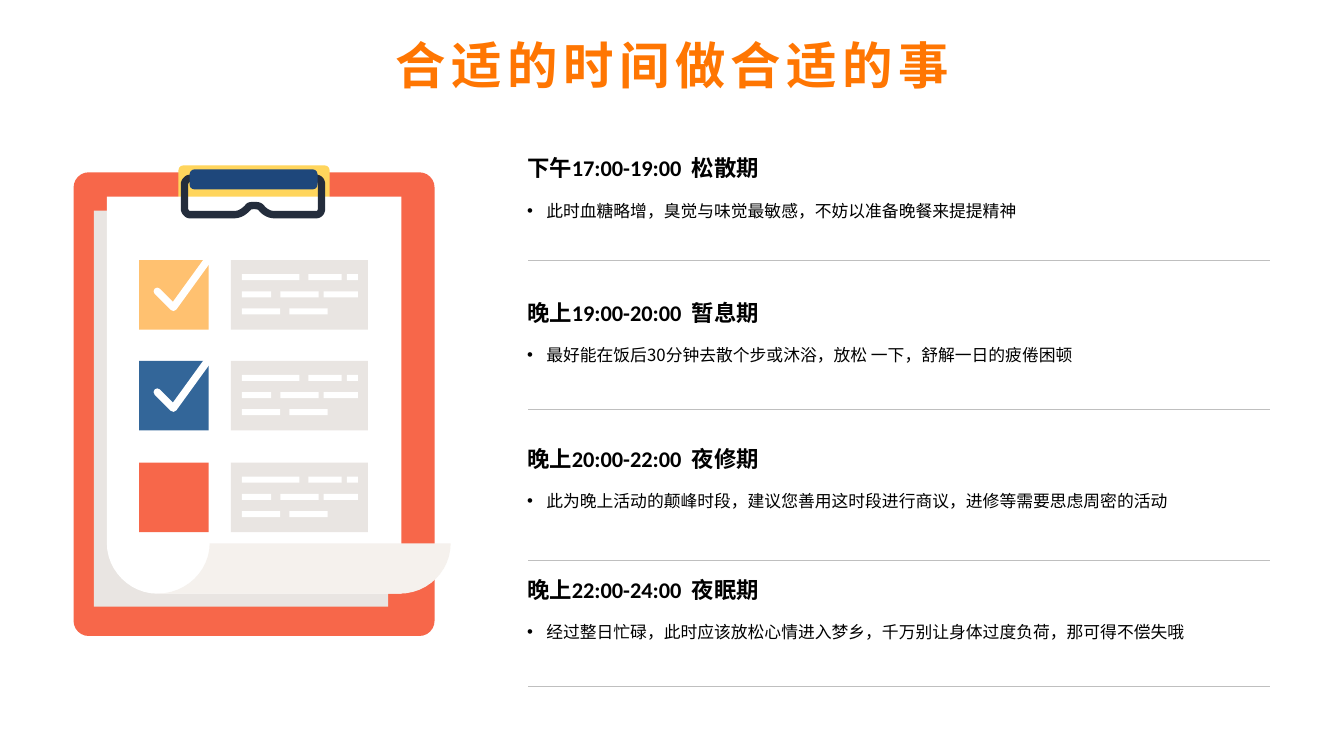
from lxml import etree
from pptx import Presentation
from pptx.dml.color import RGBColor
from pptx.enum.shapes import MSO_CONNECTOR, MSO_SHAPE
from pptx.enum.text import MSO_ANCHOR, MSO_AUTO_SIZE, PP_ALIGN
from pptx.oxml.ns import qn
from pptx.util import Inches, Pt

RECT = MSO_SHAPE.RECTANGLE
ROUNDED = MSO_SHAPE.ROUNDED_RECTANGLE
STRAIGHT = MSO_CONNECTOR.STRAIGHT
TOP, BOTTOM = MSO_ANCHOR.TOP, MSO_ANCHOR.BOTTOM
CENTER = PP_ALIGN.CENTER
GROW = MSO_AUTO_SIZE.SHAPE_TO_FIT_TEXT

COLORS = {
    "title": "FF7602", "text": "000000", "rule": "BFBFBF", "board": "F7674A",
    "grey": "E9E5E2", "yellow": "FFD55C", "white": "FFFFFF", "wire": "242D3C",
    "navy": "1E477B", "curl": "F5F1ED", "orange": "FFC170", "blue": "336699",
}
CJK_FONT = "Noto Sans CJK SC"
LATIN_FONT = "Calibri"

# Heading top, heading, advice, y of the rule below
PERIODS = [
    (1.39, "下午17:00-19:00  松散期",
     "此时血糖略增，臭觉与味觉最敏感，不妨以准备晚餐来提提精神", 2.58),
    (2.82, "晚上19:00-20:00  暂息期",
     "最好能在饭后30分钟去散个步或沐浴，放松 一下，舒解一日的疲倦困顿", 4.06),
    (4.27, "晚上20:00-22:00  夜修期",
     "此为晚上活动的颠峰时段，建议您善用这时段进行商议，进修等需要思虑周密的活动", 5.56),
    (5.57, "晚上22:00-24:00  夜眠期",
     "经过整日忙碌，此时应该放松心情进入梦乡，千万别让身体过度负荷，那可得不偿失哦", 6.81),
]
# Row top, box colour, ticked or not
CHECK_ROWS = [(2.58, "orange", True), (3.58, "blue", True), (4.59, "board", False)]
# Offset below the row top, then (left, width) of each bar
NOTE_LINES = [
    (0.14, [(2.4, 0.57), (3.06, 0.33), (3.44, 0.11)]),
    (0.31, [(2.4, 0.29), (2.78, 0.38), (3.21, 0.34)]),
    (0.48, [(2.4, 0.38), (2.87, 0.38)]),
]


def rgb(color):
    return RGBColor.from_string(COLORS[color])


def add_block(shapes, left, top, width, height, color, radius=0):
    block = shapes.add_shape(ROUNDED if radius else RECT, Inches(left), Inches(top),
                             Inches(width), Inches(height))
    if radius:
        block.adjustments[0] = radius / min(width, height)
    block.shadow.inherit = False
    block.fill.solid()
    block.fill.fore_color.rgb = rgb(color)
    block.line.fill.background()


def trace(steps, samples=12):
    """Turn (x, y) points and (x1, y1, x2, y2, x, y) Bezier steps into points."""
    points = []
    for step in steps:
        if len(step) == 2:
            points.append(step)
            continue
        controls = [points[-1], step[:2], step[2:4], step[4:]]
        for n in range(1, samples + 1):
            t = n / samples
            weights = ((1 - t) ** 3, 3 * t * (1 - t) ** 2, 3 * t * t * (1 - t), t ** 3)
            points.append(tuple(sum(w * p[axis] for w, p in zip(weights, controls))
                                for axis in (0, 1)))
    return [(Inches(x), Inches(y)) for x, y in points]


def add_outline(shapes, steps, fill=None, stroke=None, close=True):
    points = trace(steps)
    builder = shapes.build_freeform(*points[0], scale=1.0)
    builder.add_line_segments(points[1:], close=close)
    outline = builder.convert_to_shape()
    outline.shadow.inherit = False
    if fill:
        outline.fill.solid()
        outline.fill.fore_color.rgb = rgb(fill)
    else:
        outline.fill.background()
    if stroke:
        outline.line.width = Pt(5.25)
        outline.line.color.rgb = rgb(stroke)
        ln = outline.line._get_or_add_ln()
        ln.set("cap", "rnd")
        etree.SubElement(ln, qn("a:round"))
    else:
        outline.line.fill.background()


def add_run(paragraph, text, size, color, font, bold=False, spacing=None):
    run = paragraph.add_run()
    run.text = text
    run.font.size = Pt(size)
    run.font.bold = bold
    run.font.color.rgb = rgb(color)
    run.font.name = font
    properties = run._r.get_or_add_rPr()
    etree.SubElement(properties, qn("a:ea")).set("typeface", CJK_FONT)
    if spacing:
        properties.set("spc", str(spacing * 100))


def add_paragraph_box(shapes, top, height, anchor):
    box = shapes.add_textbox(Inches(5.13), Inches(top), Inches(7.47), Inches(height))
    box.text_frame.word_wrap = True
    box.text_frame.vertical_anchor = anchor
    return box.text_frame.paragraphs[0]


def add_bullet(paragraph):
    properties = paragraph._p.get_or_add_pPr()
    properties.set("marL", str(Inches(0.19)))
    properties.set("indent", str(-Inches(0.19)))
    etree.SubElement(properties, qn("a:buFont")).set("typeface", "Arial")
    etree.SubElement(properties, qn("a:buChar")).set("char", "•")


def add_rule(shapes, y):
    rule = shapes.add_connector(STRAIGHT, Inches(5.24), Inches(y), Inches(12.6), Inches(y))
    rule.line.color.rgb = rgb("rule")
    rule.line.width = Pt(0.25)
    etree.SubElement(rule._element.spPr, qn("a:effectLst"))


def add_period(shapes, top, heading, advice, rule_y):
    add_run(add_paragraph_box(shapes, top, 0.46, BOTTOM), heading, 16, "text",
            LATIN_FONT, bold=True)
    advice_line = add_paragraph_box(shapes, top + 0.45, 1.03, TOP)
    advice_line.line_spacing = 1.5
    add_bullet(advice_line)
    add_run(advice_line, advice, 12, "text", CJK_FONT)
    add_rule(shapes, rule_y)


def add_check_row(shapes, top, color, ticked):
    add_block(shapes, 1.38, top, 0.69, 0.69, color)
    add_block(shapes, 2.29, top, 1.36, 0.69, "grey")
    if ticked:
        tick = [(1.56, top + 0.31), (1.72, top + 0.47), (2.06, top)]
        add_outline(shapes, tick, stroke="white", close=False)
    for offset, bars in NOTE_LINES:
        for left, width in bars:
            add_block(shapes, left, top + offset, width, 0.06, "white")


def add_clipboard(shapes):
    add_block(shapes, 0.73, 1.71, 3.58, 4.6, "board", radius=0.15)
    add_block(shapes, 0.93, 2.09, 2.92, 3.93, "grey")
    add_block(shapes, 1.77, 1.64, 1.5, 0.62, "yellow", radius=0.05)
    paper = [(3.98, 5.89), (1.56, 5.89), (1.29, 5.89, 1.06, 5.66, 1.06, 5.39),
             (1.06, 1.95), (3.98, 1.95)]
    add_outline(shapes, paper, fill="white")
    wire = [(3.14, 1.77), (1.88, 1.77), (1.86, 1.77, 1.83, 1.8, 1.83, 1.83),
            (1.83, 2.07), (1.83, 2.1, 1.86, 2.13, 1.88, 2.13), (2.32, 2.13),
            (2.38, 2.13, 2.42, 2.1, 2.46, 2.06), (2.47, 2.04, 2.49, 2.04, 2.52, 2.04),
            (2.55, 2.04, 2.57, 2.04, 2.59, 2.06), (2.62, 2.1, 2.67, 2.13, 2.72, 2.13),
            (3.14, 2.13), (3.17, 2.13, 3.19, 2.1, 3.19, 2.07), (3.19, 1.83),
            (3.19, 1.8, 3.17, 1.77, 3.14, 1.77)]
    add_outline(shapes, wire, stroke="wire")
    add_block(shapes, 1.88, 1.68, 1.27, 0.2, "navy", radius=0.05)
    curl = [(2.08, 5.39), (2.08, 5.66, 1.85, 5.89, 1.56, 5.89), (3.96, 5.89),
            (4.25, 5.89, 4.47, 5.66, 4.47, 5.39)]
    add_outline(shapes, curl, fill="curl")
    for row in CHECK_ROWS:
        add_check_row(shapes, *row)


def set_title(title, text):
    title.left, title.top = Inches(2.41), Inches(0.29)
    title.width, title.height = Inches(8.52), Inches(0.71)
    frame = title.text_frame
    frame.word_wrap = True
    frame.auto_size = GROW
    frame.vertical_anchor = TOP
    frame.paragraphs[0].alignment = CENTER
    add_run(frame.paragraphs[0], text, 36, "title", CJK_FONT, bold=True, spacing=4)


def main():
    deck = Presentation()
    deck.slide_width, deck.slide_height = Inches(13.33), Inches(7.5)
    slide = deck.slides.add_slide(deck.slide_layouts[5])
    set_title(slide.shapes.title, "合适的时间做合适的事")
    add_clipboard(slide.shapes.add_group_shape().shapes)
    for period in PERIODS:
        add_period(slide.shapes, *period)
    deck.save("out.pptx")


if __name__ == "__main__":
    main()
